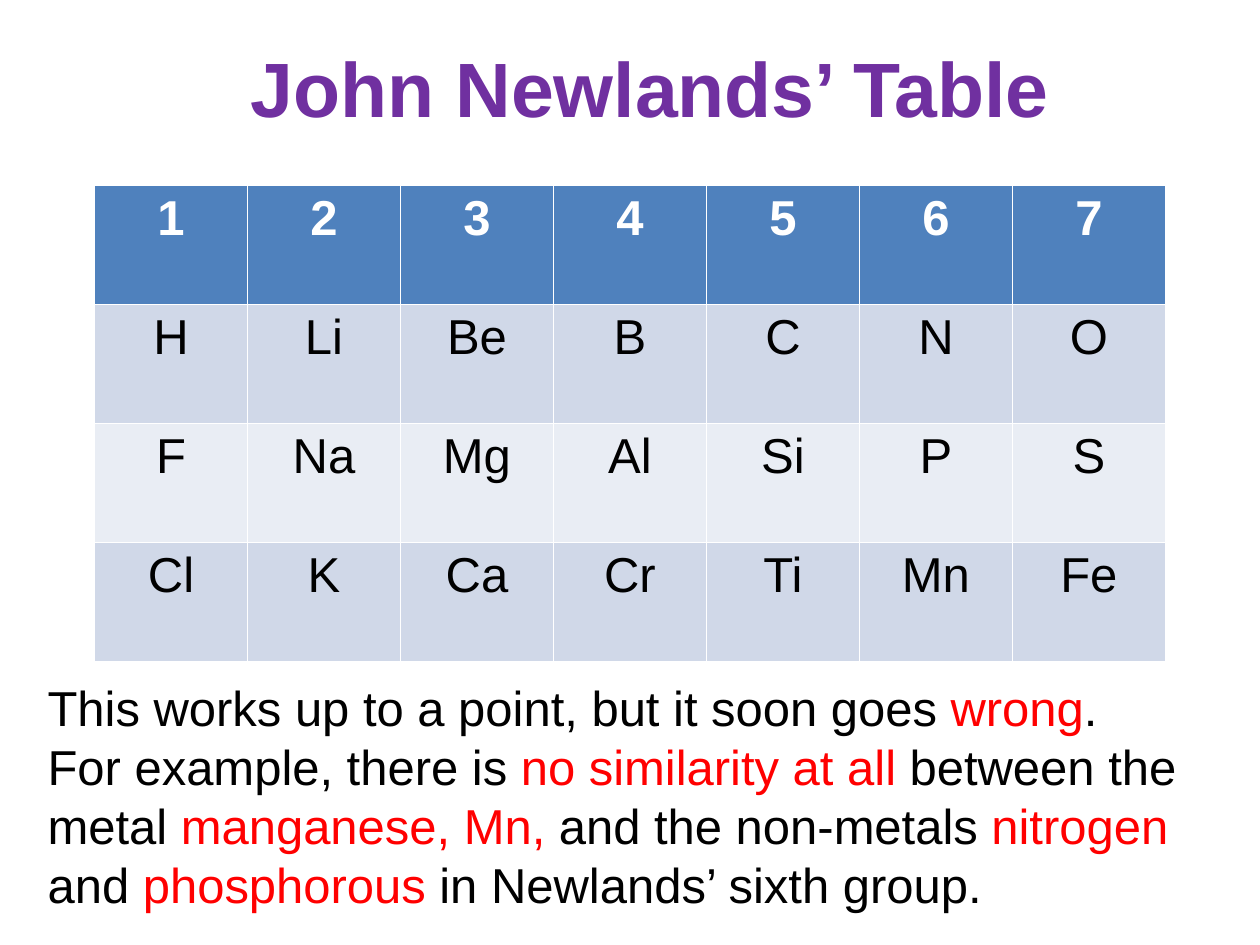
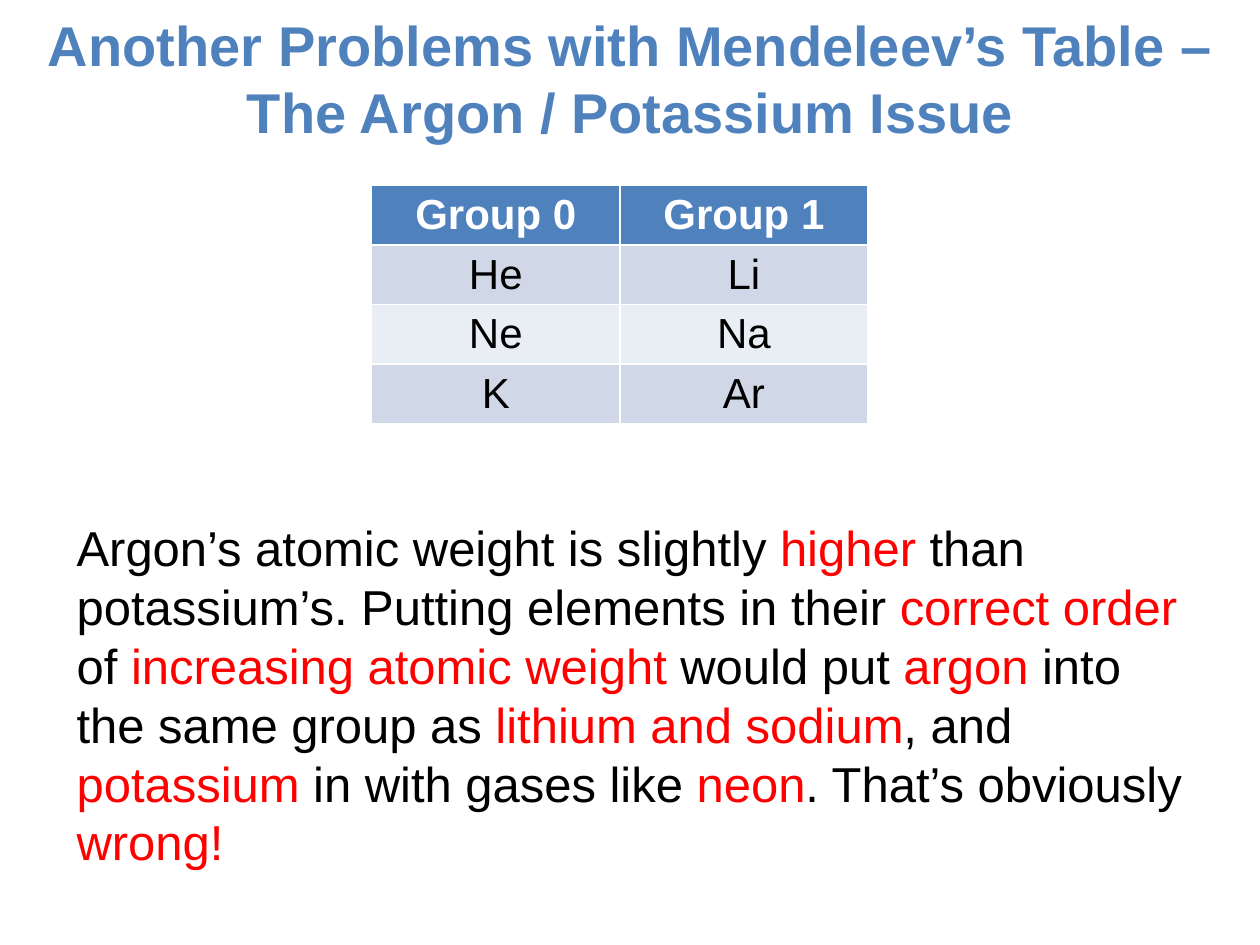
"""Build two slides on early periodic tables, each with a title, a table and a comment."""
import dataclasses

import pptx
import pptx.dml.color
import pptx.enum.text
import pptx.util


@dataclasses.dataclass(frozen=True)
class Theme:
    font: str = "Arial"
    purple: str = "7030A0"
    blue: str = "4F81BD"
    band_dark: str = "D0D8E8"
    band_light: str = "E9EDF4"
    red: str = "FF0000"
    black: str = "000000"
    white: str = "FFFFFF"
    title_large: int = 44
    title_small: int = 32
    body: int = 28
    table_small: int = 24


theme = Theme()
rgb = pptx.dml.color.RGBColor.from_string
CENTER = pptx.enum.text.PP_ALIGN.CENTER

prs = pptx.Presentation()
prs.slide_width = pptx.util.Inches(10)
prs.slide_height = pptx.util.Inches(7.5)
COLUMN = prs.slide_width / 100
ROW = prs.slide_height / 75


def place(left, top, width, height):
    """Turn grid columns and rows into slide lengths."""
    return [round(n * unit) for n, unit in zip((left, top, width, height), (COLUMN, ROW) * 2)]


def style(p, size, color, bold=False, align=None):
    """Set the font and alignment of a paragraph."""
    p.font.name = theme.font
    p.font.size = pptx.util.Pt(size)
    p.font.color.rgb = rgb(color)
    p.font.bold = bold
    p.alignment = align


slides = [
    {
        "title": "John Newlands’ Table",
        "title_box": (9.1, 2.1, 85, 9.5),
        "title_size": theme.title_large,
        "title_color": theme.purple,
        "table": ["1 2 3 4 5 6 7".split(), "H Li Be B C N O".split(),
                  "F Na Mg Al Si P S".split(), "Cl K Ca Cr Ti Mn Fe".split()],
        "table_box": (7.5, 14.7, 85, 37.8),
        "table_size": theme.body,
        "comment": [
            "This works up to a point, but it soon goes *wrong*.",
            "For example, there is *no similarity at all* between the metal "
            "*manganese, Mn, *and the non-metals *nitrogen* and *phosphorous* "
            "in Newlands’ sixth group.",
        ],
        "comment_box": (2.8, 53.3, 95.3, 19.9),
    },
    {
        "title": "Another Problems with Mendeleev’s Table – The Argon / Potassium Issue",
        "title_box": (2, 0, 96.1, 12.3),
        "title_size": theme.title_small,
        "title_color": theme.blue,
        "table": [["Group 0", "Group 1"], ["He", "Li"], ["Ne", "Na"], ["K", "Ar"]],
        "table_box": (29.5, 14.7, 39.4, 18.9),
        "table_size": theme.table_small,
        "comment": [
            "Argon’s atomic weight is slightly *higher* than potassium’s. "
            "Putting elements in their *correct order *of *increasing atomic weight *"
            "would put *argon* into the same group as *lithium and sodium*, and "
            "*potassium* in with gases like *neon*. That’s obviously *wrong!*",
        ],
        "comment_box": (5.1, 40.6, 91.3, 29.3),
    },
]

for content in slides:
    s = prs.slides.add_slide(prs.slide_layouts.get_by_name("Title Only"))

    title = s.shapes.title
    title.left, title.top, title.width, title.height = place(*content["title_box"])
    tf = title.text_frame
    tf.text = content["title"]
    tf.auto_size = pptx.enum.text.MSO_AUTO_SIZE.NONE
    tf.vertical_anchor = pptx.enum.text.MSO_ANCHOR.MIDDLE
    style(tf.paragraphs[0], content["title_size"], content["title_color"], True, CENTER)

    rows = content["table"]
    table = s.shapes.add_table(len(rows), len(rows[0]), *place(*content["table_box"])).table
    for i, symbols in enumerate(rows):
        header = i == 0
        fill = theme.blue if header else theme.band_dark if i % 2 else theme.band_light
        for j, symbol in enumerate(symbols):
            cell = table.cell(i, j)
            cell.text = symbol
            cell.fill.solid()
            cell.fill.fore_color.rgb = rgb(fill)
            style(cell.text_frame.paragraphs[0], content["table_size"],
                  theme.white if header else theme.black, header, CENTER)

    tf = s.shapes.add_textbox(*place(*content["comment_box"])).text_frame
    tf.word_wrap = True
    for i, sentence in enumerate(content["comment"]):
        p = tf.add_paragraph() if i else tf.paragraphs[0]
        style(p, theme.body, theme.black)
        for k, part in enumerate(sentence.split("*")):
            if part:
                r = p.add_run()
                r.text = part
                r.font.color.rgb = rgb(theme.red if k % 2 else theme.black)

prs.save("out.pptx")
